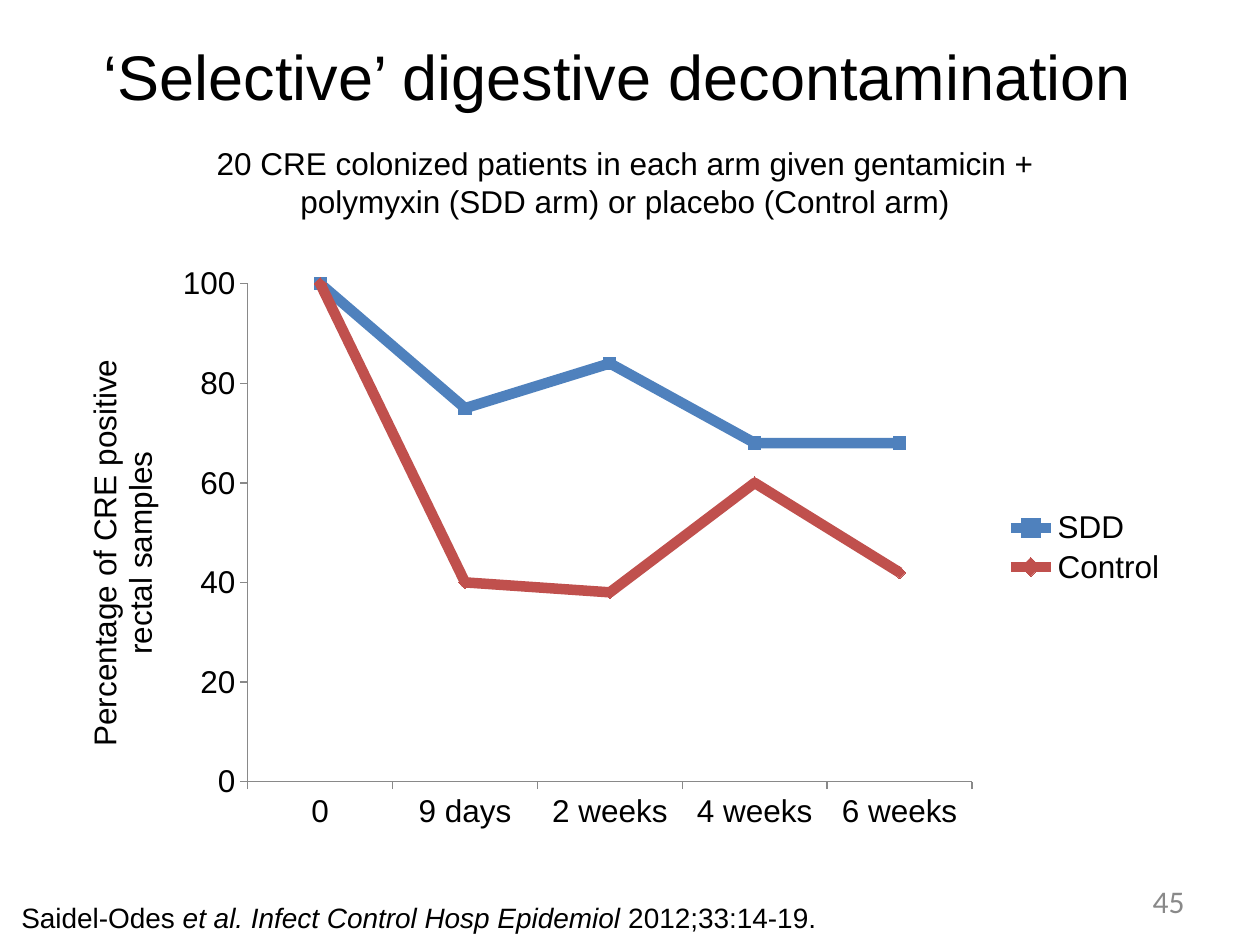
from lxml.etree import SubElement
from pptx import Presentation
from pptx.chart.data import CategoryChartData
from pptx.dml.color import RGBColor
from pptx.enum.chart import XL_CHART_TYPE, XL_LEGEND_POSITION, XL_MARKER_STYLE, XL_TICK_MARK
from pptx.enum.text import MSO_ANCHOR, PP_ALIGN
from pptx.oxml.ns import qn
from pptx.util import Cm, Pt


class Theme:
    font = "Arial"
    number_font = "Calibri"
    text = RGBColor.from_string("000000")
    muted = RGBColor.from_string("898989")
    sdd = RGBColor.from_string("4F81BD")
    control = RGBColor.from_string("C0504D")
    title_size = Pt(36)
    body_size = Pt(18)
    source_size = Pt(16)
    series_width = Pt(6)


def fill_text(box, spans, size, align, font=Theme.font, color=Theme.text):
    """Write (text, italic) spans as one paragraph, centred vertically."""
    frame = box.text_frame
    frame.word_wrap = True
    frame.vertical_anchor = MSO_ANCHOR.MIDDLE
    para = frame.paragraphs[0]
    para.alignment = align
    for text, italic in spans:
        span = para.add_run()
        span.text = text
        span.font.name = font
        span.font.size = size
        span.font.italic = italic
        span.font.color.rgb = color


def place_in_chart(element, index, **fractions):
    """Give a chart part a manual layout, in fractions of the chart."""
    for old in element.findall(qn("c:layout")):
        element.remove(old)
    layout = element.makeelement(qn("c:layout"))
    element.insert(index, layout)
    manual = SubElement(layout, qn("c:manualLayout"))
    if element.tag == qn("c:plotArea"):
        SubElement(manual, qn("c:layoutTarget")).set("val", "inner")
    for side in ("x", "y"):
        SubElement(manual, qn(f"c:{side}Mode")).set("val", "edge")
    for name, value in fractions.items():
        SubElement(manual, qn(f"c:{name}")).set("val", str(value))


deck = Presentation()
deck.slide_width, deck.slide_height = Cm(25.4), Cm(19.05)
page = deck.slides.add_slide(deck.slide_layouts[5])

# Title
title = page.shapes.title
title.left, title.top, title.width, title.height = Cm(0.18), Cm(-0.08), Cm(24.54), Cm(3.18)
fill_text(title, [("‘Selective’ digestive decontamination", False)],
          Theme.title_size, PP_ALIGN.CENTER)

# Chart
chart_data = CategoryChartData()
chart_data.categories = ["0", "9 days", "2 weeks", "4 weeks", "6 weeks"]
chart_data.add_series("SDD", (100, 75, 84, 68, 68))
chart_data.add_series("Control", (100, 40, 38, 60, 42))
chart = page.shapes.add_chart(XL_CHART_TYPE.LINE_MARKERS, Cm(0.89), Cm(5.13),
                              Cm(22.81), Cm(11.81), chart_data).chart
chart.has_title = False
chart.font.name = Theme.font
chart.font.size = Theme.body_size
chart.font.color.rgb = Theme.text
chart.plots[0].vary_by_categories = False

series_styles = [(Theme.sdd, XL_MARKER_STYLE.SQUARE), (Theme.control, XL_MARKER_STYLE.DIAMOND)]
for series, (color, marker_style) in zip(chart.plots[0].series, series_styles):
    series.smooth = False
    series.format.line.color.rgb = color
    series.format.line.width = Theme.series_width
    series.marker.style = marker_style
    series.marker.size = 7
    series.marker.format.fill.solid()
    series.marker.format.fill.fore_color.rgb = color
    series.marker.format.line.color.rgb = color

for axis in (chart.category_axis, chart.value_axis):
    axis.has_major_gridlines = False
    axis.major_tick_mark = XL_TICK_MARK.OUTSIDE
    axis.minor_tick_mark = XL_TICK_MARK.NONE
    axis.format.line.color.rgb = Theme.muted

value_axis = chart.value_axis
value_axis.minimum_scale, value_axis.maximum_scale, value_axis.major_unit = 0, 100, 20
axis_title = value_axis.axis_title
axis_title.text_frame.text = "Percentage of CRE positive rectal samples"
axis_font = axis_title.text_frame.paragraphs[0].runs[0].font
axis_font.name, axis_font.size, axis_font.bold = Theme.font, Theme.body_size, False
axis_font.color.rgb = Theme.text

chart.has_legend = True
chart.legend.position = XL_LEGEND_POSITION.RIGHT
chart.legend.include_in_layout = False

plot_area = chart.element.find(".//" + qn("c:plotArea"))
place_in_chart(plot_area, 0, x=0.18, y=0.05, w=0.64, h=0.85)
place_in_chart(plot_area.find(".//" + qn("c:title")), 1, x=0.03, y=0.17)
place_in_chart(chart.element.find(".//" + qn("c:legend")), 1, x=0.85, y=0.43, w=0.14, h=0.14)

# Study description, source and page number
description = page.shapes.add_textbox(Cm(3.1), Cm(2.72), Cm(19), Cm(1.88))
fill_text(description,
          [("20 CRE colonized patients in each arm given gentamicin + "
            "polymyxin (SDD arm) or placebo (Control arm)", False)],
          Theme.body_size, PP_ALIGN.CENTER)

source = page.shapes.add_textbox(Cm(0.18), Cm(17.98), Cm(17.4), Cm(1.02))
fill_text(source,
          [("Saidel-Odes ", False), ("et al. Infect Control Hosp Epidemiol", True),
           (" 2012;33:14-19.", False)],
          Theme.source_size, PP_ALIGN.LEFT)

page_number = page.shapes.add_textbox(Cm(18.21), Cm(17.65), Cm(5.92), Cm(1.02))
fill_text(page_number, [("45", False)], Theme.body_size, PP_ALIGN.RIGHT,
          Theme.number_font, Theme.muted)

deck.save("out.pptx")
